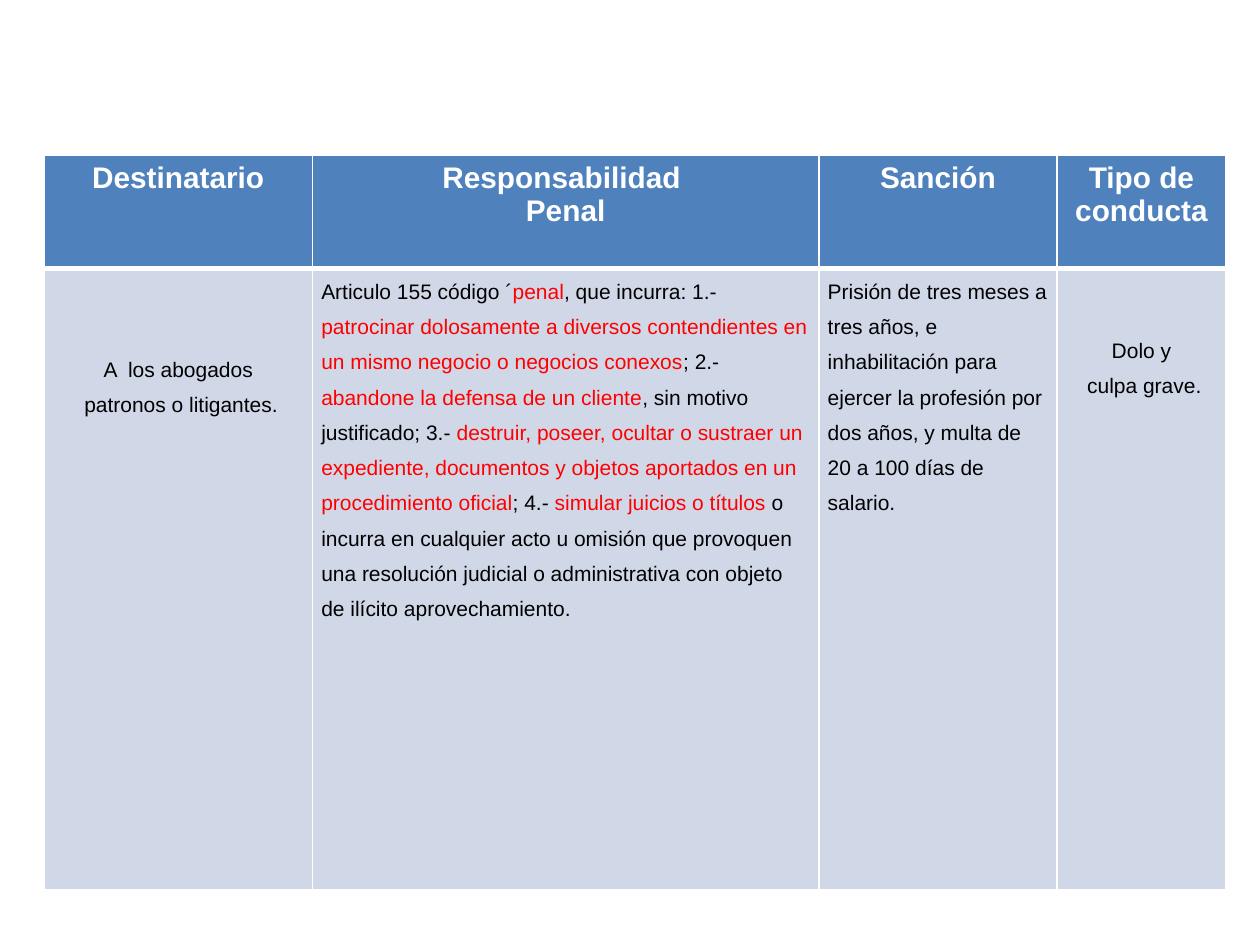
"""Builds a slide with a table of lawyers' criminal liability."""
from lxml import etree
from pptx import Presentation, util as u
from pptx.dml.color import RGBColor
from pptx.enum import text
from pptx.oxml.ns import qn

COLORS = {"head": "4F81BD", "body": "D0D8E8", "line": "FFFFFF",
          "white": "FFFFFF", "black": "000000", "red": "FF0000"}
COLS = [2.13, 4.02, 1.89, 1.34]
ROWS = [0.9, 4.93]
HEADERS = [["Destinatario"], ["Responsabilidad ", "Penal"], ["Sanción"],
           ["Tipo de conducta"]]
ARTICLE = [
    "Articulo 155 código ´", "penal", ", que incurra: 1.- ",
    "patrocinar dolosamente a diversos contendientes en un mismo negocio o negocios conexos",
    "; 2.- ", "abandone la defensa de un cliente",
    ", sin motivo justificado; 3.- ",
    "destruir, poseer, ocultar o sustraer un expediente, documentos y objetos "
    "aportados en un procedimiento oficial",
    "; 4.- ", "simular juicios o títulos",
    " o incurra en cualquier acto u omisión que provoquen una resolución judicial "
    "o administrativa con objeto de ilícito aprovechamiento.",
]
PENALTY = ("Prisión de tres meses a tres años, e inhabilitación para ejercer la "
           "profesión por dos años, y multa de 20 a 100 días de salario.")
BODY = [
    dict(paragraphs=["A  los abogados", " patronos o litigantes."], top=0.62),
    dict(paragraphs=[ARTICLE], centered=False),
    dict(paragraphs=[PENALTY], centered=False),
    dict(paragraphs=["Dolo y", " culpa grave."], top=0.47),
]


def rgb(name):
    """Return the named colour."""
    return RGBColor.from_string(COLORS[name])


def set_borders(cell, top=1, bottom=1):
    """Draw the four borders of a cell, with widths in points."""
    tcPr = cell._tc.get_or_add_tcPr()
    widths = {"a:lnL": 1, "a:lnR": 1, "a:lnT": top, "a:lnB": bottom}
    for i, (tag, width) in enumerate(widths.items()):
        ln = etree.Element(qn(tag), w=str(u.Pt(width)))
        fill = etree.SubElement(ln, qn("a:solidFill"))
        etree.SubElement(fill, qn("a:srgbClr"), val=COLORS["line"])
        tcPr.insert(i, ln)


def write_cell(cell, paragraphs, fill="body", size=12, bold=False, color="black",
               centered=True, spacing=1.5, top=0, bottom=0, side=0.07):
    """Fill a cell; a list as paragraph alternates plain and red runs."""
    cell.fill.solid()
    cell.fill.fore_color.rgb = rgb(fill)
    cell.margin_left = cell.margin_right = u.Inches(side)
    cell.margin_top, cell.margin_bottom = u.Inches(top), u.Inches(bottom)
    tf = cell.text_frame
    for i, content in enumerate(paragraphs):
        p = tf.add_paragraph() if i else tf.paragraphs[0]
        p.alignment = text.PP_ALIGN.CENTER if centered else text.PP_ALIGN.LEFT
        p.line_spacing = spacing
        for j, part in enumerate([content] if isinstance(content, str) else content):
            r = p.add_run()
            r.text = part
            r.font.name, r.font.size, r.font.bold = "Arial", u.Pt(size), bold
            r.font.color.rgb = rgb("red" if j % 2 else color)


def add_liability_table(s):
    """Add the table with its header and body rows."""
    table = s.shapes.add_table(len(ROWS), len(COLS), u.Inches(0.35), u.Inches(1.23),
                               u.Inches(sum(COLS)), u.Inches(sum(ROWS))).table
    for column, width in zip(table.columns, COLS):
        column.width = u.Inches(width)
    for row, height in zip(table.rows, ROWS):
        row.height = u.Inches(height)
    for i, (header, body) in enumerate(zip(HEADERS, BODY)):
        head_cell, body_cell = table.cell(0, i), table.cell(1, i)
        write_cell(head_cell, header, fill="head", size=17, bold=True, color="white",
                   spacing=1.0, top=0.05, bottom=0.05, side=0.1)
        write_cell(body_cell, **body)
        set_borders(head_cell, bottom=3)
        set_borders(body_cell, top=3)


def main():
    """Build and save the slide."""
    prs = Presentation()
    prs.slide_width, prs.slide_height = u.Inches(10), u.Inches(7.5)
    s = prs.slides.add_slide(prs.slide_layouts[6])
    add_liability_table(s)
    prs.save("out.pptx")


if __name__ == "__main__":
    main()
